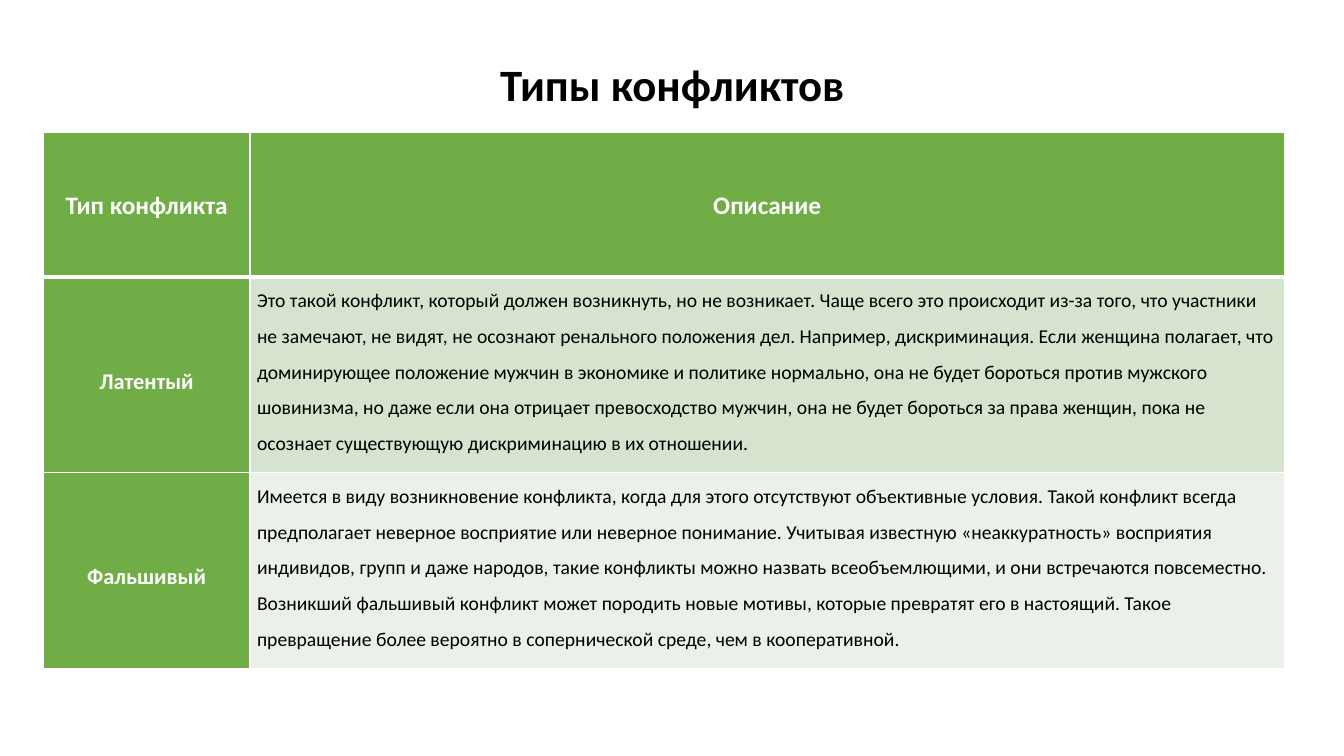
import pptx
import pptx.util
import pptx.dml.color
import pptx.enum.text
import pptx.oxml.ns
from lxml import etree

Inches = pptx.util.Inches
Pt = pptx.util.Pt
ALIGN = pptx.enum.text.PP_ALIGN
ANCHOR = pptx.enum.text.MSO_ANCHOR
qn = pptx.oxml.ns.qn

COLORS = {
    "white": "FFFFFF",
    "black": "000000",
    "green": "70AD47",
    "pale": "D5E3CF",
    "paler": "EBF1E9",
}

HEADER = {"size": 18, "bold": True, "color": "white", "align": ALIGN.CENTER,
          "anchor": ANCHOR.MIDDLE, "spacing": 1.07}
KIND = HEADER | {"size": 16, "spacing": 1.5}
DESCRIPTION = {"size": 14, "bold": False, "color": "black", "align": ALIGN.LEFT,
               "anchor": ANCHOR.TOP, "spacing": 1.5}

ROWS = [
    [("Тип конфликта", HEADER, "green"), ("Описание", HEADER, "green")],
    [("Латентый", KIND, "green"),
     ("Это такой конфликт, который должен возникнуть, но не возникает. Чаще всего это "
      "происходит из-за того, что участники не замечают, не видят, не осознают ренального "
      "положения дел. Например, дискриминация. Если женщина полагает, что доминирующее "
      "положение мужчин в экономике и политике нормально, она не будет бороться против "
      "мужского шовинизма, но даже если она отрицает превосходство мужчин, она не будет "
      "бороться за права женщин, пока не осознает существующую дискриминацию в их отношении.",
      DESCRIPTION, "pale")],
    [("Фальшивый", KIND, "green"),
     ("Имеется в виду возникновение конфликта, когда для этого отсутствуют объективные "
      "условия. Такой конфликт всегда предполагает неверное восприятие или неверное "
      "понимание. Учитывая известную «неаккуратность» восприятия индивидов, групп и даже "
      "народов, такие конфликты можно назвать всеобъемлющими, и они встречаются повсеместно. "
      "Возникший фальшивый конфликт может породить новые мотивы, которые превратят его в "
      "настоящий. Такое превращение более вероятно в сопернической среде, чем в кооперативной.",
      DESCRIPTION, "paler")],
]
COLUMN_WIDTHS = [2.05, 10.26]
ROW_HEIGHTS = [1.44, 1.94, 1.94]


def format_paragraph(para, size, bold, color, align, spacing):
    para.alignment = align
    para.line_spacing = spacing
    for name, value in {"name": "Calibri", "size": Pt(size), "bold": bold}.items():
        setattr(para.font, name, value)
    para.font.color.rgb = pptx.dml.color.RGBColor.from_string(COLORS[color])


def add_border(cell, side, width):
    line = etree.SubElement(cell._tc.get_or_add_tcPr(), qn("a:" + side), w=str(Pt(width)))
    fill = etree.SubElement(line, qn("a:solidFill"))
    etree.SubElement(fill, qn("a:srgbClr"), val=COLORS["white"])


deck = pptx.Presentation()
deck.slide_width = Inches(13.33)
deck.slide_height = Inches(7.5)
page = deck.slides.add_slide(deck.slide_layouts[5])

title = page.shapes.title
for name, value in {"left": 0.92, "top": 0.52, "width": 11.5, "height": 0.68}.items():
    setattr(title, name, Inches(value))
title.text_frame.text = "Типы конфликтов"
title.text_frame.vertical_anchor = ANCHOR.MIDDLE
format_paragraph(title.text_frame.paragraphs[0], 32, True, "black", ALIGN.CENTER, 0.9)

table = page.shapes.add_table(
    len(ROWS), len(COLUMN_WIDTHS), Inches(0.43), Inches(1.31),
    Inches(sum(COLUMN_WIDTHS)), Inches(sum(ROW_HEIGHTS))).table
table.first_col = True
for column, width in zip(table.columns, COLUMN_WIDTHS):
    column.width = Inches(width)
for row, height in zip(table.rows, ROW_HEIGHTS):
    row.height = Inches(height)

for row_index, row in enumerate(ROWS):
    for column_index, (text, style, fill) in enumerate(row):
        cell = table.cell(row_index, column_index)
        cell.text = text
        margins = {"margin_left": Inches(0.07), "margin_right": Inches(0.07),
                   "margin_top": 0, "margin_bottom": 0}
        for name, value in (margins | {"vertical_anchor": style["anchor"]}).items():
            setattr(cell, name, value)
        para = cell.text_frame.paragraphs[0]
        para.space_after = Pt(8)
        format_paragraph(para, style["size"], style["bold"], style["color"],
                         style["align"], style["spacing"])
        widths = {"lnL": 1, "lnR": 1, "lnT": 3 if row_index == 1 else 1,
                  "lnB": 3 if row_index == 0 else 1}
        for side, width in widths.items():
            add_border(cell, side, width)
        cell.fill.solid()
        cell.fill.fore_color.rgb = pptx.dml.color.RGBColor.from_string(COLORS[fill])

deck.save("out.pptx")
